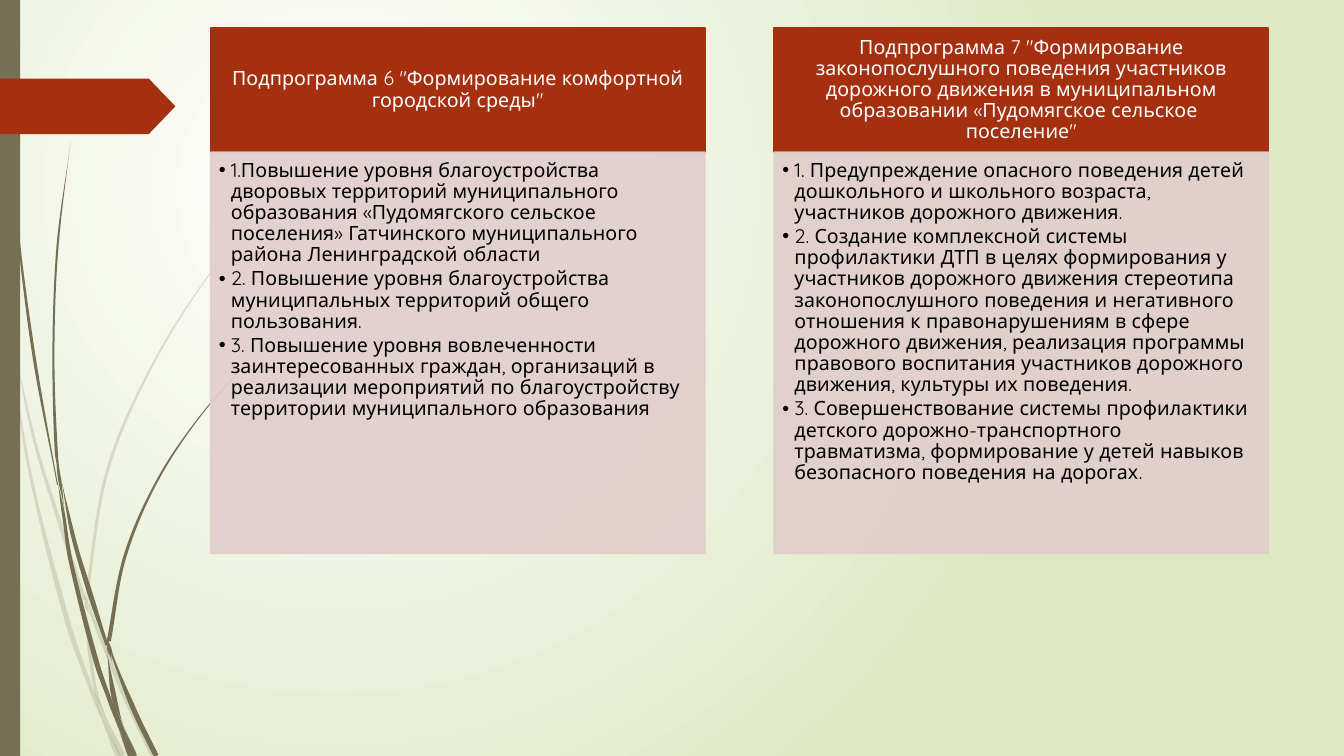
from math import hypot
from lxml.etree import SubElement
from pptx import Presentation
from pptx.dml.color import RGBColor
from pptx.enum.shapes import MSO_SHAPE as Geo
from pptx.enum.text import MSO_ANCHOR as Anchor, MSO_AUTO_SIZE as Fit, PP_ALIGN as Align
from pptx.oxml.ns import qn
from pptx.util import Inches, Pt

FONT = "Quicksand"
HEX = {"rust": "A53010", "olive": "766F54", "rose": "E1CDCC",
       "white": "FFFFFF", "lime": "DFE8C4", "black": "000000"}

# Each blade of grass is a centre line of (x, y, width) points.
PALE = [
    [(0, 2.9, .04), (.05, 3.16, .03), (.11, 3.5, 0)],
    [(.14, 3.45, 0), (.35, 4.4, .03), (.6, 5.21, .04), (.84, 5.95, .03)],
    [(.88, 5.96, 0), (.91, 6.1, .03), (1.25, 6.93, .05), (1.52, 7.5, .05)],
    [(1.05, 7.11, 0), (1.22, 7.5, .05)],
    [(.11, 3.5, 0), (.3, 4.7, .03), (.68, 6.2, .05), (.92, 6.88, .04), (1.01, 7.14, 0)],
    [(.84, 5.99, 0), (.89, 6.46, .04), (.95, 6.85, .03), (1.05, 7.11, 0)],
    [(3.12, 1.53, 0), (2.68, 1.98, .01), (2.28, 2.44, .01), (1.59, 3.48, .02),
     (1.08, 4.62, .03), (.87, 5.84, .03), (.88, 5.96, 0)],
    [(1.01, 7.14, 0), (1.17, 7.5, .05)],
    [(.85, 5.86, 0), (.86, 6, .04), (.88, 6.1, 0)],
    [(.93, 6.83, 0), (1.02, 7.1, .05), (1.19, 7.5, .01)],
]
DARK = [
    [(.04, 0, .01), (.08, 1.1, .01), (.18, 2.32, .02), (.34, 3.55, .03), (.57, 4.81, .01)],
    [(.6, 4.72, 0), (.73, 5.34, .04), (.9, 5.91, .05), (1.06, 6.4, .03)],
    [(1.1, 6.41, 0), (1.12, 6.52, .02), (1.34, 7.07, .05), (1.55, 7.5, .05)],
    [(.57, 4.77, 0), (.63, 5.1, .03), (.7, 5.56, .04), (.96, 6.58, .05),
     (1.1, 6.98, .04), (1.17, 7.22, 0)],
    [(.7, 1.41, 0), (.57, 2.45, .02), (.53, 3.49, .02), (.56, 4.51, .03), (.6, 4.72, 0)],
    [(1.22, 7.19, 0), (1.34, 7.5, .04)],
    [(.55, 4.49, 0), (.59, 4.75, .03), (.64, 5.05, 0)],
    [(2.61, 3.44, 0), (2.04, 4.06, .01), (1.57, 4.75, .02), (1.24, 5.52, .03), (1.08, 6.36, .04)],
    [(1.17, 7.22, 0), (1.29, 7.5, .04)],
    [(1.06, 6.45, 0), (1.13, 6.91, .05), (1.22, 7.19, 0)],
    [(1.06, 6.31, 0), (1.08, 6.43, .04), (1.11, 6.56, 0)],
    [(1.1, 6.91, 0), (1.19, 7.19, .05), (1.32, 7.5, .03)],
]

PANELS = [
    ("Подпрограмма 6 \"Формирование комфортной городской среды\"", [
        "1.Повышение уровня благоустройства дворовых территорий муниципального образования "
        "«Пудомягского сельское поселения» Гатчинского муниципального района Ленинградской области",
        "2. Повышение уровня благоустройства муниципальных территорий общего пользования.",
        "3. Повышение уровня вовлеченности заинтересованных граждан, организаций в реализации "
        "мероприятий по благоустройству территории муниципального образования"]),
    ("Подпрограмма 7 \"Формирование законопослушного поведения участников дорожного движения "
     "в муниципальном образовании «Пудомягское сельское  поселение\"", [
        "1. Предупреждение опасного поведения детей дошкольного и школьного возраста, "
        "участников дорожного движения.",
        "2. Создание комплексной системы профилактики ДТП в целях формирования у участников "
        "дорожного движения стереотипа законопослушного поведения и негативного отношения к "
        "правонарушениям в сфере дорожного движения, реализация программы правового воспитания "
        "участников дорожного движения, культуры их поведения.",
        "3. Совершенствование системы профилактики детского дорожно-транспортного травматизма, "
        "формирование у детей навыков безопасного поведения на дорогах."]),
]


def rgb(name):
    return RGBColor.from_string(HEX[name])


def fade(fill, share):
    """Make a solid colour partly opaque; share is in percent."""
    for tint in fill.iter(qn("a:srgbClr")):
        SubElement(tint, qn("a:alpha"), val=str(share * 1000))


def paint(shape, color, share=100, edge=False):
    shape.fill.solid()
    shape.fill.fore_color.rgb = rgb(color)
    if edge:
        shape.line.color.rgb = rgb(color)
        shape.line.width = Pt(1.25)
    else:
        shape.line.fill.background()
    if share < 100:
        fade(shape.element.spPr, share)


def write(shape, lines, color="black", size=14, align=Align.LEFT, anchor=Anchor.TOP,
          pad=(.1, .05, .1, .05), hang=0, after=0):
    frame = shape.text_frame
    frame.word_wrap, frame.auto_size = True, Fit.NONE
    frame.vertical_anchor = anchor
    (frame.margin_left, frame.margin_top,
     frame.margin_right, frame.margin_bottom) = map(Inches, pad)
    for i, line in enumerate(lines):
        para = frame.paragraphs[0] if i == 0 else frame.add_paragraph()
        para.alignment, para.line_spacing = align, .9
        para.space_before, para.space_after = Pt(0), Pt(after)
        if hang:
            props = para._p.get_or_add_pPr()
            props.set("marL", str(Inches(hang)))
            props.set("indent", str(-Inches(hang)))
        run = para.add_run()
        run.text = line
        font = run.font
        font.name, font.size, font.bold = FONT, Pt(size), False
        font.color.rgb = rgb(color)


def edges(points):
    """Give both sides of a blade as Bezier points, down one and up the other."""
    slopes = []
    for (x0, y0, _), (x1, y1, _) in zip(points[:1] + points, points[1:] + points[-1:]):
        far = hypot(x1 - x0, y1 - y0)
        slopes.append(((x1 - x0) / far, (y1 - y0) / far))
    sides = []
    for sign in (1, -1):
        knots = [(x + sign * v * w / 2, y - sign * u * w / 2)
                 for (x, y, w), (u, v) in zip(points, slopes)]
        side = knots[:1]
        for (ax, ay), (bx, by), (au, av), (bu, bv) in zip(knots, knots[1:], slopes, slopes[1:]):
            arm = hypot(bx - ax, by - ay) / 3
            side += [(ax + au * arm, ay + av * arm), (bx - bu * arm, by - bv * arm), (bx, by)]
        sides.append(side)
    return sides[0], sides[1][::-1]


def bend(route):
    """Turn each three points of a route into one curve."""
    for line in route.findall(qn("a:lnTo"))[::3]:
        curve = line.makeelement(qn("a:cubicBezTo"))
        line.addprevious(curve)
        for _ in range(3):
            step = curve.getnext()
            curve.append(step[0])
            route.remove(step)


def blade(slide, points, share):
    down, up = edges(points)
    # The doubled points make the blade's tip a curve as well.
    track = [tuple(map(Inches, p)) for p in down + [down[-1], up[0]] + up]
    pen = slide.shapes.build_freeform(*track[0])
    pen.add_line_segments(track[1:], close=True)
    shape = pen.convert_to_shape()
    shape.shadow.inherit = False
    bend(next(shape.element.iter(qn("a:path"))))
    paint(shape, "olive", share)


def block(slide, kind, color, box):
    shape = slide.shapes.add_shape(kind, *map(Inches, box))
    shape.shadow.inherit = False
    paint(shape, color)
    return shape


def backdrop(slide):
    fill = slide.background.fill
    fill.gradient()
    for stop, color in zip(fill.gradient_stops, ("white", "lime")):
        stop.color.rgb = rgb(color)
    grad = next(slide.element.iter(qn("a:gradFill")))
    grad.remove(grad.find(qn("a:lin")))
    ring = SubElement(grad, qn("a:path"), path="circle")
    SubElement(ring, qn("a:fillToRect"), l="50000", t="50000", r="100000", b="100000")


def decor(slide):
    for group, share in ((PALE, 20), (DARK, 100)):
        for points in group:
            blade(slide, points, share)
    block(slide, Geo.RECTANGLE, "olive", (0, 0, .2, 7.5))
    flag = block(slide, Geo.PENTAGON, "rust", (0, .78, 1.74, .55))
    flag.adjustments[0] = .48


def place(slide, shape, box):
    """Move a placeholder to the box, in front of the decor."""
    shape.left, shape.top, shape.width, shape.height = map(Inches, box)
    slide.shapes._spTree.append(shape.element)


def panel(slide, head, body, box, title, items):
    x, y, w, h = box
    cap = 1.23
    place(slide, head, (x, y, w, cap))
    paint(head, "rust", edge=True)
    write(head, [title], color="white", align=Align.CENTER, anchor=Anchor.MIDDLE,
          pad=(.11, .06, .11, .06))
    place(slide, body, (x, y + cap, w, h - cap))
    paint(body, "rose", share=90, edge=True)
    write(body, items, pad=(.08, .08, .11, .12), hang=.12, after=2)


def main():
    deck = Presentation()
    deck.slide_width, deck.slide_height = Inches(13.33), Inches(7.5)
    slide = deck.slides.add_slide(deck.slide_layouts.get_by_name("Comparison"))
    title, *slots = slide.placeholders
    title.element.getparent().remove(title.element)
    backdrop(slide)
    decor(slide)
    for i, (head, items) in enumerate(PANELS):
        panel(slide, *slots[2 * i:2 * i + 2], (2.09 + 5.59 * i, .28, 4.9, 5.21), head, items)
    deck.save("out.pptx")


if __name__ == "__main__":
    main()
